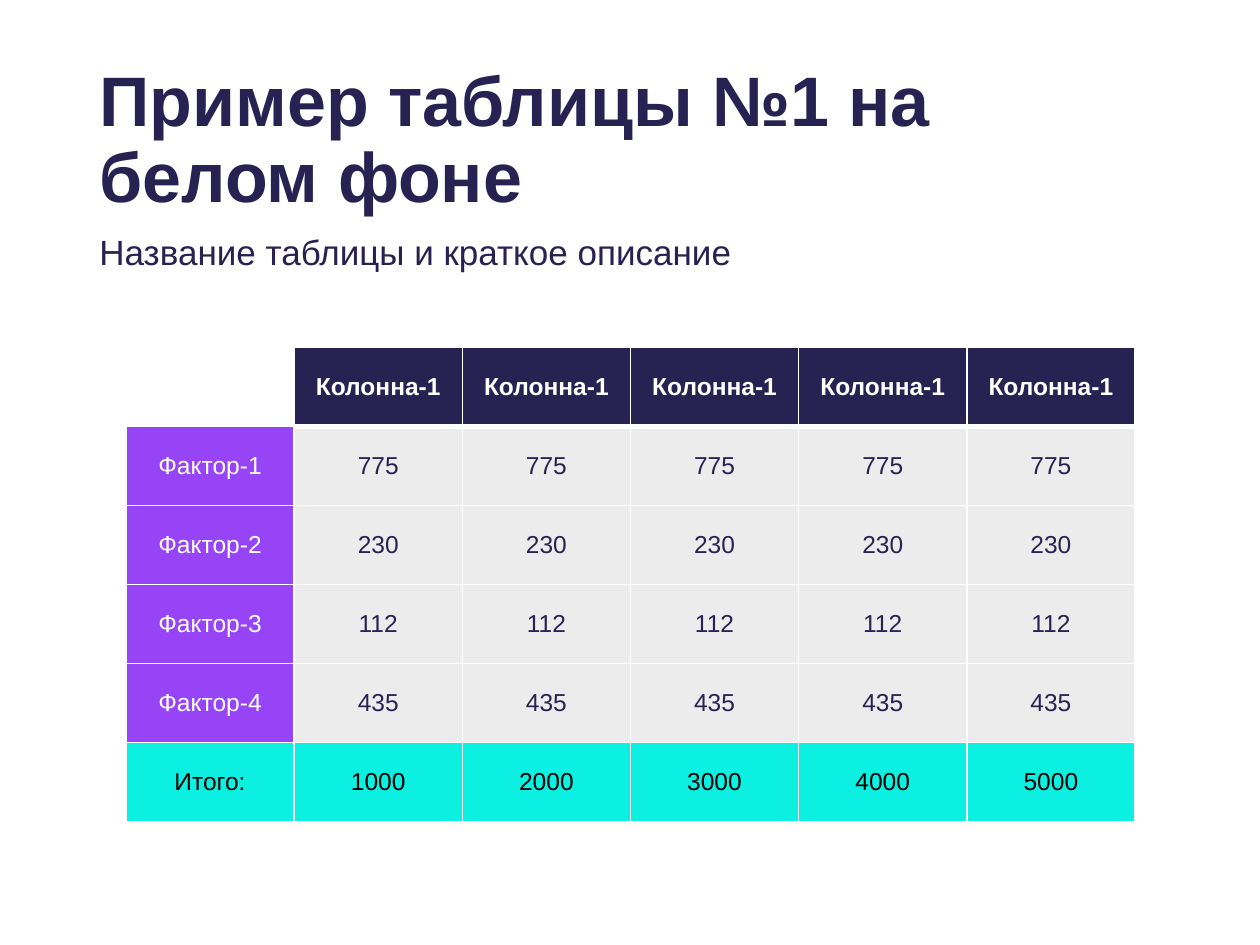
from dataclasses import dataclass

from lxml.etree import SubElement as Sub
from pptx import Presentation
from pptx.dml.color import RGBColor as Rgb
from pptx.enum.text import MSO_ANCHOR as Anchor, MSO_AUTO_SIZE as Fit, PP_ALIGN as Align
from pptx.oxml.ns import qn
from pptx.util import Inches, Pt


@dataclass(frozen=True)
class Theme:
    """Colours, type sizes and line widths."""
    font: str = "Arial"
    ink: str = "282252"
    white: str = "FFFFFF"
    black: str = "000000"
    side: str = "9744F6"
    body: str = "ECECEC"
    total: str = "0BF0E1"
    head: int = 40
    sub: int = 20
    cell: int = 14
    thin: int = 1
    thick: int = 3


THEME = Theme()
ROWS = [
    [""] + ["Колонна-1"] * 5,
    ["Фактор-1"] + ["775"] * 5,
    ["Фактор-2"] + ["230"] * 5,
    ["Фактор-3"] + ["112"] * 5,
    ["Фактор-4"] + ["435"] * 5,
    ["Итого:", "1000", "2000", "3000", "4000", "5000"],
]


def style(para, size, color, bold=False):
    """Format every run of a paragraph."""
    for run in para.runs:
        run.font.name = THEME.font
        run.font.size = Pt(size)
        run.font.bold = bold
        run.font.color.rgb = Rgb.from_string(color)


def add_title(slide, box, lines):
    """Place the title placeholder in the box."""
    title = slide.shapes.title
    title.left, title.top, title.width, title.height = box
    frame = title.text_frame
    frame.auto_size = Fit.NONE
    frame.vertical_anchor = Anchor.MIDDLE
    para = frame.paragraphs[0]
    para.alignment = Align.LEFT
    para.line_spacing = 0.9
    first, *rest = lines
    para.add_run().text = first
    for line in rest:
        para.add_line_break()
        para.add_run().text = line
    style(para, THEME.head, THEME.ink, True)


def add_intro(slide, box, text):
    """Place the table's description in the box."""
    frame = slide.shapes.add_textbox(*box).text_frame
    frame.word_wrap = True
    frame.auto_size = Fit.SHAPE_TO_FIT_TEXT
    frame.text = text
    style(frame.paragraphs[0], THEME.sub, THEME.ink)


def add_edges(cell, top, base):
    """Draw white borders around a cell."""
    props = cell._tc.get_or_add_tcPr()
    widths = {"L": THEME.thin, "R": THEME.thin, "T": top, "B": base}
    for side, width in widths.items():
        line = Sub(props, qn(f"a:ln{side}"), w=str(Pt(width)))
        fill = Sub(line, qn("a:solidFill"))
        Sub(fill, qn("a:srgbClr"), val=THEME.white)


def pick(row, col, last):
    """Return the fill and text colours of a cell."""
    if row == 0:
        return (THEME.ink if col else None), THEME.white
    if row == last:
        return THEME.total, THEME.black
    if col == 0:
        return THEME.side, THEME.white
    return THEME.body, THEME.ink


def add_grid(slide, box, rows):
    """Place the table with equal rows and columns in the box."""
    table = slide.shapes.add_table(len(rows), len(rows[0]), *box).table
    table.horz_banding = False
    last = len(rows) - 1
    for row, texts in enumerate(rows):
        for col, text in enumerate(texts):
            cell = table.cell(row, col)
            add_edges(cell,
                      THEME.thick if row == 1 and col else THEME.thin,
                      THEME.thick if row == 0 and col else THEME.thin)
            fill, color = pick(row, col, last)
            if fill:
                cell.fill.solid()
                cell.fill.fore_color.rgb = Rgb.from_string(fill)
            else:
                cell.fill.background()
            cell.vertical_anchor = Anchor.MIDDLE
            cell.text_frame.text = text
            para = cell.text_frame.paragraphs[0]
            para.alignment = Align.CENTER
            style(para, THEME.cell, color, row == 0)


def main():
    """Build and save the slide."""
    deck = Presentation()
    deck.slide_width, deck.slide_height = Inches(10), Inches(7.5)
    slide = deck.slides.add_slide(deck.slide_layouts.get_by_name("Title Only"))
    add_title(slide, (Inches(0.69), Inches(0.4), Inches(8.62), Inches(1.45)),
              ["Пример таблицы №1 на ", "белом фоне"])
    add_intro(slide, (Inches(0.69), Inches(1.78), Inches(8.2), Inches(0.44)),
              "Название таблицы и краткое описание")
    add_grid(slide, (Inches(1), Inches(2.76), Inches(8.01), Inches(3.76)), ROWS)
    deck.save("out.pptx")


if __name__ == "__main__":
    main()
